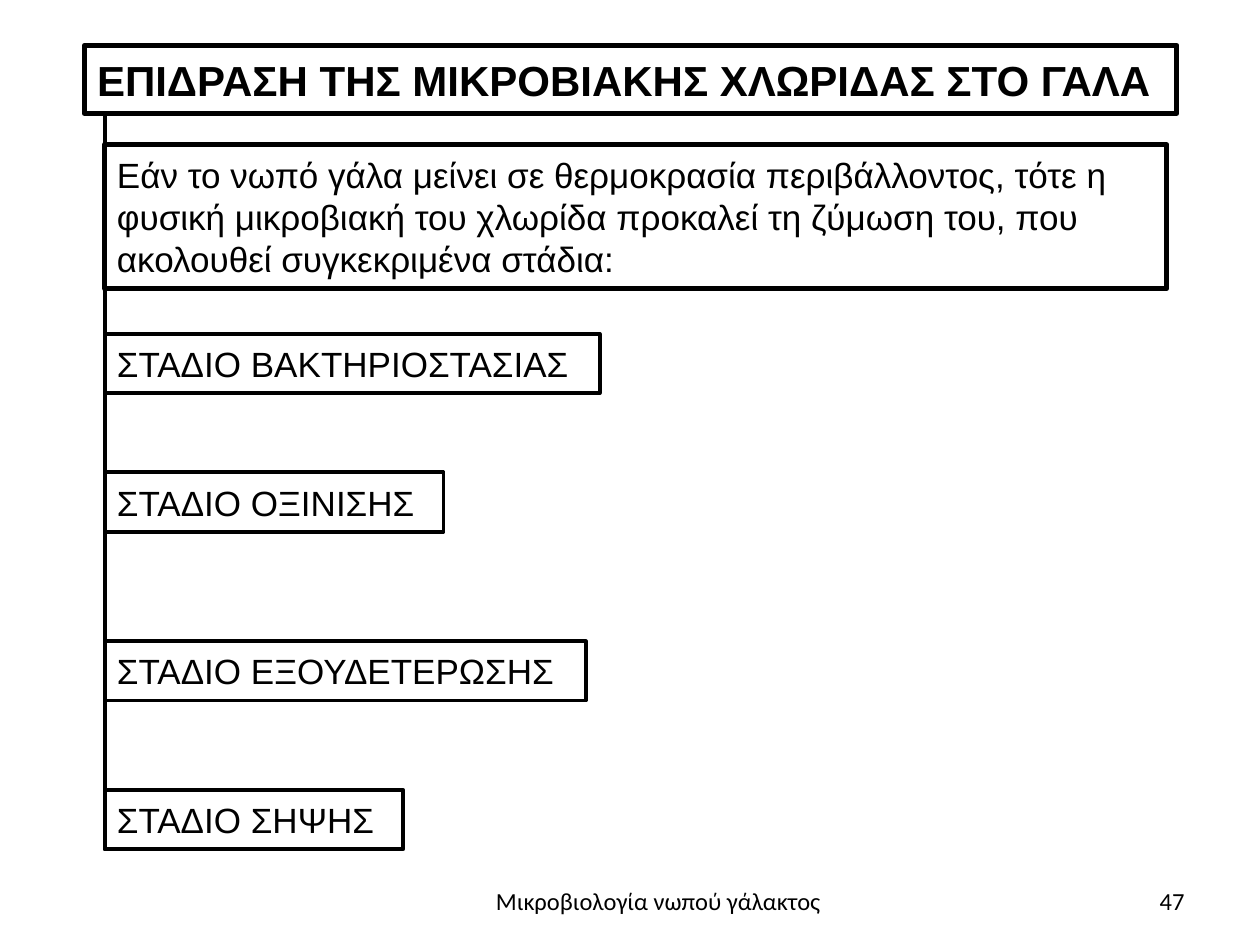
from lxml.etree import SubElement
from pptx import Presentation
from pptx.dml.color import RGBColor
from pptx.enum.shapes import MSO_CONNECTOR, MSO_SHAPE
from pptx.enum.text import MSO_ANCHOR, MSO_AUTO_SIZE, PP_ALIGN
from pptx.oxml.ns import qn
from pptx.util import Inches, Pt

BLACK = RGBColor(0, 0, 0)
TITLE = "ΕΠΙΔΡΑΣΗ ΤΗΣ ΜΙΚΡΟΒΙΑΚΗΣ ΧΛΩΡΙΔΑΣ ΣΤΟ ΓΑΛΑ"
INTRODUCTION = (
    "Εάν το νωπό γάλα μείνει σε θερμοκρασία περιβάλλοντος, τότε η φυσική "
    "μικροβιακή του χλωρίδα προκαλεί τη ζύμωση του, που ακολουθεί "
    "συγκεκριμένα στάδια:"
)
STAGES = [
    ("ΣΤΑΔΙΟ ΒΑΚΤΗΡΙΟΣΤΑΣΙΑΣ", 2.65, 3.93),
    ("ΣΤΑΔΙΟ ΟΞΙΝΙΣΗΣ", 3.75, 2.69),
    ("ΣΤΑΔΙΟ ΕΞΟΥΔΕΤΕΡΩΣΗΣ", 5.09, 3.82),
    ("ΣΤΑΔΙΟ ΣΗΨΗΣ", 6.27, 2.37),
]
FOOTER = "Μικροβιολογία νωπού γάλακτος"
PAGE_NUMBER = "47"

TITLE_BOX = (0.67, 0.36, 8.67, 0.54)
STEM_LEFT = 0.83
STAGE_HEIGHT = 0.47
THICK, THIN = 3, 2.25


def write_text(shape, text, size=20, font="Arial", bold=False,
               align=PP_ALIGN.LEFT, anchor=MSO_ANCHOR.MIDDLE):
    frame = shape.text_frame
    frame.word_wrap = True
    frame.auto_size = MSO_AUTO_SIZE.NONE
    frame.vertical_anchor = anchor
    paragraph = frame.paragraphs[0]
    paragraph.alignment = align
    run = paragraph.add_run()
    run.text = text
    run.font.size = Pt(size)
    run.font.name = font
    run.font.bold = bold
    run.font.color.rgb = BLACK


def draw_line(line, width):
    line.color.rgb = BLACK
    line.width = Pt(width)


def add_box(slide, text, left, top, width, height, line_width):
    box = slide.shapes.add_shape(
        MSO_SHAPE.RECTANGLE, *map(Inches, (left, top, width, height)))
    box.shadow.inherit = False
    box.fill.background()
    draw_line(box.line, line_width)
    write_text(box, text)


def add_label(slide, text, left, top, width, height, **text_format):
    label = slide.shapes.add_textbox(*map(Inches, (left, top, width, height)))
    write_text(label, text, size=14, font="Calibri", **text_format)


def add_stem(slide, top, bottom):
    stem = slide.shapes.add_connector(
        MSO_CONNECTOR.STRAIGHT,
        *map(Inches, (STEM_LEFT, top, STEM_LEFT, bottom)))
    draw_line(stem.line, THIN)
    SubElement(stem.element.spPr, qn("a:effectLst"))


def main():
    presentation = Presentation()
    presentation.slide_width = Inches(10)
    presentation.slide_height = Inches(7.5)
    slide = presentation.slides.add_slide(presentation.slide_layouts[5])

    title = slide.shapes.title
    title.left, title.top, title.width, title.height = map(Inches, TITLE_BOX)
    draw_line(title.line, THICK)
    write_text(title, TITLE, size=24, bold=True)

    add_stem(slide, TITLE_BOX[1] + TITLE_BOX[3], STAGES[-1][1] + STAGE_HEIGHT)
    for text, top, width in STAGES:
        add_box(slide, text, STEM_LEFT, top, width, STAGE_HEIGHT, THIN)
    add_box(slide, INTRODUCTION, STEM_LEFT, 1.15, 8.43, 1.14, THICK)

    add_label(slide, FOOTER, 3.48, 6.98, 3.49, 0.55,
              align=PP_ALIGN.CENTER, anchor=MSO_ANCHOR.TOP)
    add_label(slide, PAGE_NUMBER, 7.17, 6.95, 2.33, 0.4, align=PP_ALIGN.RIGHT)
    presentation.save("out.pptx")


if __name__ == "__main__":
    main()
